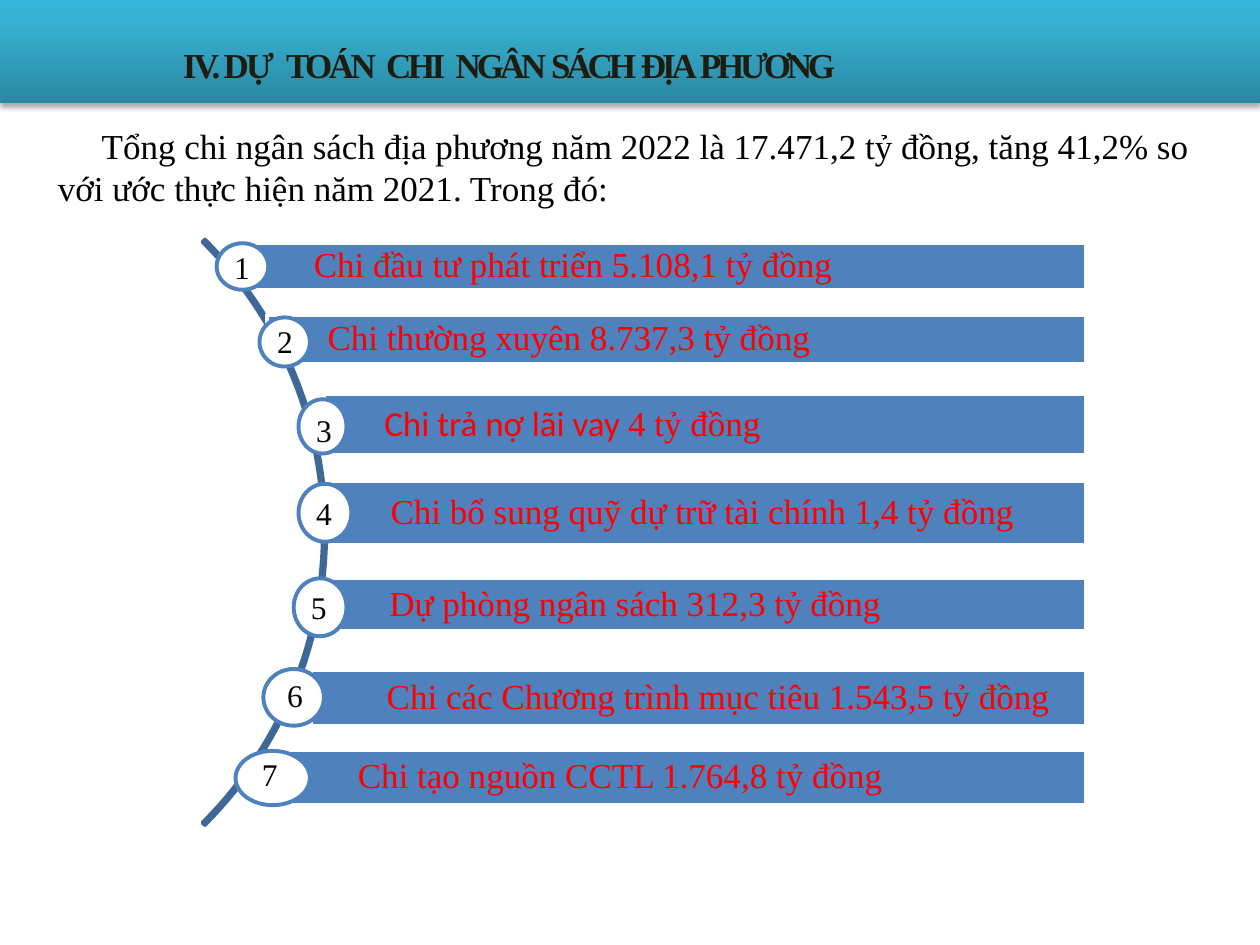
from copy import deepcopy

from lxml import etree
from pptx import Presentation
from pptx import util as u
from pptx.dml.color import RGBColor
from pptx.enum import shapes, text
from pptx.oxml import ns

BLACK = RGBColor(0x00, 0x00, 0x00)
WHITE = RGBColor(0xFF, 0xFF, 0xFF)
RED = RGBColor(0xFF, 0x00, 0x00)
BLUE = RGBColor(0x4F, 0x81, 0xBD)
ARC_BLUE = RGBColor(0x3F, 0x67, 0x97)
TITLE_INK = RGBColor(0x1E, 0x1C, 0x11)
BANNER_STOPS = [
    (0, RGBColor(0x2A, 0x88, 0xA2)),
    (0.8, RGBColor(0x37, 0xB1, 0xD2)),
    (1, RGBColor(0x34, 0xB4, 0xD6)),
]
SERIF = "Times New Roman"
SANS = "Calibri"
BAR_RIGHT = 620.6

TITLE = [("IV. DỰ  ", -1.6), ("TOÁN  ", -2.1), ("CHI  ", -2),
         ("NGÂN  SÁCH  ĐỊA  PHƯƠNG", -2.4)]
INTRO = ("Tổng chi ngân sách địa phương năm 2022 là 17.471,2 tỷ đồng, "
         "tăng 41,2% so với ước thực hiện năm 2021. Trong đó:")

# Each item: label runs, bar (left, top, height), text inset, circle box, number position
ITEMS = [
    ([("Chi đầu tư phát triển 5.108,1 tỷ đồng", SERIF)],
     (144.7, 139, 26.6), 34.6, (123.8, 139, 29.5, 26.6), (126.7, 138.2)),
    ([("Chi thường xuyên 8.737,3 tỷ đồng", SERIF)],
     (152.6, 180, 28.1), 34.6, (148.3, 181.4, 28.8, 28.1), (151.2, 180.7)),
    ([("Chi trả nợ lãi vay ", SANS), ("4 tỷ đồng", SERIF)],
     (185, 225.4, 34.6), 34.6, (170.6, 228.2, 27.4, 31), (173.5, 231.1)),
    ([("Chi bổ sung quỹ dự trữ tài chính 1,4 tỷ đồng", SERIF)],
     (188.6, 275, 36.7), 34.6, (170.6, 276.5, 30.2, 33.1), (173.5, 278.6)),
    ([("Dự phòng ngân sách 312,3 tỷ đồng", SERIF)],
     (187.9, 330.5, 30.2), 34.6, (167.8, 330.5, 30.2, 33.1), (170.6, 332.6)),
    ([("Chi các Chương trình mục tiêu 1.543,5 tỷ đồng", SERIF)],
     (177.8, 383, 31.7), 43.2, (150.5, 382.3, 34.6, 32.4), (157, 383)),
    ([("Chi tạo nguồn CCTL 1.764,8 tỷ đồng", SERIF)],
     (161.3, 428.4, 31.7), 43.2, (134.6, 429.1, 42.5, 31), (142.6, 427.7)),
]


def add_shape(s, kind, box, fill, line=None):
    """Add a shadowless preset shape with a solid fill and optional outline."""
    sp = s.shapes.add_shape(kind, *(u.Pt(v) for v in box))
    sp.fill.solid()
    sp.fill.fore_color.rgb = fill
    if line is None:
        sp.line.fill.background()
    else:
        sp.line.color.rgb = line
        sp.line.width = u.Pt(2.25)
    sp.shadow.inherit = False
    return sp


def set_margins(tf, left, top, right, bottom):
    """Set the four text insets in points and turn wrapping on."""
    tf.word_wrap = True
    tf.margin_left, tf.margin_top = u.Pt(left), u.Pt(top)
    tf.margin_right, tf.margin_bottom = u.Pt(right), u.Pt(bottom)


def add_run(p, words, size, color, font=SERIF):
    """Append a formatted run to a paragraph."""
    r = p.add_run()
    r.text = words
    r.font.size = u.Pt(size)
    r.font.name = font
    r.font.color.rgb = color
    return r


def add_text(s, box, words, size, margins):
    """Add a black wrapping text box and return its paragraph."""
    tf = s.shapes.add_textbox(*(u.Pt(v) for v in box)).text_frame
    set_margins(tf, *margins)
    p = tf.paragraphs[0]
    add_run(p, words, size, BLACK)
    return p


def add_banner(s):
    """Add the gradient title banner with its soft shadow."""
    sp = add_shape(s, shapes.MSO_SHAPE.RECTANGLE, (0, 0, 720, 59), BLUE)
    sp.fill.gradient()
    sp.fill.gradient_angle = 90
    stops = sp._element.spPr.find(".//" + ns.qn("a:gsLst"))
    stops.append(deepcopy(stops[-1]))
    for stop, (position, color) in zip(sp.fill.gradient_stops, BANNER_STOPS):
        stop.position = position
        stop.color.rgb = color
    effects = sp._element.spPr.find(ns.qn("a:effectLst"))
    shadow = etree.SubElement(effects, ns.qn("a:outerShdw"), blurRad=str(u.Pt(3.1)),
                              dist=str(u.Pt(1.8)), dir="5400000", rotWithShape="0")
    color = etree.SubElement(shadow, ns.qn("a:srgbClr"), val="000000")
    etree.SubElement(color, ns.qn("a:alpha"), val="35000")
    tf = sp.text_frame
    set_margins(tf, 104.5, 25, 0, 0)
    tf.vertical_anchor = text.MSO_ANCHOR.TOP
    p = tf.paragraphs[0]
    p.alignment = text.PP_ALIGN.LEFT
    for words, spacing in TITLE:
        r = add_run(p, words, 20, TITLE_INK)
        r.font.bold = True
        r.font._element.set("spc", str(round(spacing * 100)))


def add_arc(s):
    """Add the thin arc that links the numbered circles."""
    sp = add_shape(s, shapes.MSO_SHAPE.BLOCK_ARC, (-286.6, 67.7, 473, 473),
                   ARC_BLUE, ARC_BLUE)
    for i, value in enumerate((189, 27, 0.004)):
        sp.adjustments[i] = value


def add_item(s, number, runs, bar, inset, circle, number_at):
    """Add one labelled bar with its numbered circle."""
    left, top, height = bar
    sp = add_shape(s, shapes.MSO_SHAPE.RECTANGLE,
                   (left, top, BAR_RIGHT - left, height), BLUE, WHITE)
    tf = sp.text_frame
    set_margins(tf, inset, 4.3, 4.3, 4.3)
    tf.vertical_anchor = text.MSO_ANCHOR.MIDDLE
    p = tf.paragraphs[0]
    p.alignment = text.PP_ALIGN.LEFT
    p.line_spacing = 0.9
    for words, font in runs:
        add_run(p, words, 20, RED, font)
    add_shape(s, shapes.MSO_SHAPE.OVAL, circle, WHITE, BLUE)
    add_text(s, (*number_at, 24, 28.8), str(number), 18, (7.2, 3.6, 0, 3.6))


def main():
    """Build and save the slide."""
    prs = Presentation()
    prs.slide_width, prs.slide_height = u.Pt(720), u.Pt(540)
    s = prs.slides.add_slide(prs.slide_layouts[6])
    p = add_text(s, (33.1, 71.3, 653.8, 48.2), INTRO, 20, (0, 0, 0, 0))
    p._p.get_or_add_pPr().set("indent", str(u.Pt(25)))
    add_banner(s)
    add_arc(s)
    for number, item in enumerate(ITEMS, 1):
        add_item(s, number, *item)
    prs.save("out.pptx")


if __name__ == "__main__":
    main()
